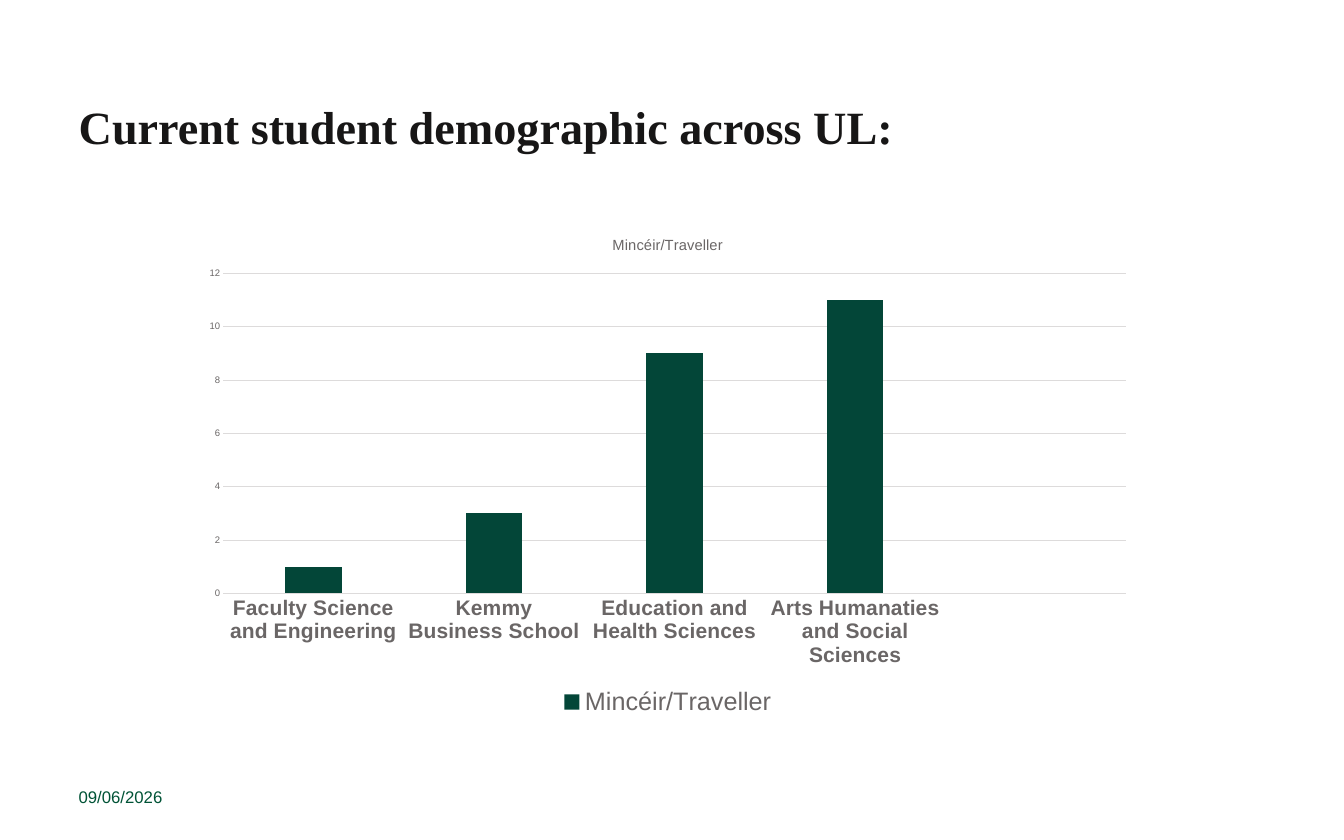
import pptx
import pptx.chart.data
import pptx.dml.color
import pptx.enum.chart
import pptx.enum.text
import pptx.util
from dataclasses import dataclass


@dataclass(frozen=True)
class Theme:
    heading_face: str = "Times New Roman"
    body_face: str = "Arial"
    ink: str = "171616"
    muted: str = "6A6666"
    rule: str = "DDDBDB"
    date_green: str = "005336"
    bar_green: str = "034638"
    heading_size: int = 44
    legend_size: int = 24
    category_size: int = 20
    date_size: int = 16
    chart_title_size: int = 14
    chart_size: int = 10
    value_size: int = 9
    rule_width: float = 0.75


theme = Theme()
SLIDE_WIDTH, SLIDE_HEIGHT = 17.78, 11.11


def style_font(font, face, size, color, bold=False):
    font.name = face
    font.size = pptx.util.Pt(size)
    font.bold = bold
    font.color.rgb = pptx.dml.color.RGBColor.from_string(color)


def share_box(left, top, width, height):
    """Turn percentages of the slide into left, top, width and height."""
    across, down = SLIDE_WIDTH / 100, SLIDE_HEIGHT / 100
    return [pptx.util.Inches(length) for length in
            (left * across, top * down, width * across, height * down)]


presentation = pptx.Presentation()
presentation.slide_width = pptx.util.Inches(SLIDE_WIDTH)
presentation.slide_height = pptx.util.Inches(SLIDE_HEIGHT)
slide = presentation.slides.add_slide(presentation.slide_layouts[5])

# Heading
heading = slide.shapes.title
heading.left, heading.top, heading.width, heading.height = share_box(5.29, 12.06, 86.22, 10.26)
heading.text_frame.text = "Current student demographic across UL:"
heading.text_frame.vertical_anchor = pptx.enum.text.MSO_ANCHOR.TOP
heading_line = heading.text_frame.paragraphs[0]
heading_line.alignment = pptx.enum.text.PP_ALIGN.LEFT
heading_line.line_spacing = 0.9
style_font(heading_line.runs[0].font, theme.heading_face, theme.heading_size, theme.ink, bold=True)

# Student numbers by faculty; the last column is left open
students = {
    "Faculty Science and Engineering": 1,
    "Kemmy Business School": 3,
    "Education and Health Sciences": 9,
    "Arts Humanaties and Social Sciences": 11,
    "": None,
}
group = "Mincéir/Traveller"
demographic = pptx.chart.data.CategoryChartData()
demographic.categories = list(students)
demographic.add_series(group, list(students.values()))
chart = slide.shapes.add_chart(
    pptx.enum.chart.XL_CHART_TYPE.COLUMN_CLUSTERED,
    *share_box(14.17, 26.01, 71.03, 59.86), demographic).chart
style_font(chart.font, theme.body_face, theme.chart_size, theme.ink)

chart.has_title = True
chart.chart_title.include_in_layout = False
chart.chart_title.text_frame.text = group
style_font(chart.chart_title.text_frame.paragraphs[0].runs[0].font,
           theme.body_face, theme.chart_title_size, theme.muted)

chart.has_legend = True
chart.legend.position = pptx.enum.chart.XL_LEGEND_POSITION.BOTTOM
chart.legend.include_in_layout = False
style_font(chart.legend.font, theme.body_face, theme.legend_size, theme.muted)

columns = chart.plots[0]
columns.vary_by_categories = False
columns.gap_width = 219
columns.overlap = -27
bars = columns.series[0].format.fill
bars.solid()
bars.fore_color.rgb = pptx.dml.color.RGBColor.from_string(theme.bar_green)

# Axes
faculties, counts = chart.category_axis, chart.value_axis
for axis in (faculties, counts):
    axis.major_tick_mark = pptx.enum.chart.XL_TICK_MARK.NONE
    axis.minor_tick_mark = pptx.enum.chart.XL_TICK_MARK.NONE
style_font(faculties.tick_labels.font, theme.body_face, theme.category_size, theme.muted, bold=True)
style_font(counts.tick_labels.font, theme.body_face, theme.value_size, theme.muted)
counts.minimum_scale, counts.maximum_scale, counts.major_unit = 0, 12, 2
counts.has_major_gridlines = True
counts.format.line.fill.background()
for rule in (faculties.format.line, counts.major_gridlines.format.line):
    rule.color.rgb = pptx.dml.color.RGBColor.from_string(theme.rule)
    rule.width = pptx.util.Pt(theme.rule_width)

# Date
date = slide.shapes.add_textbox(*share_box(5.29, 92.17, 22.5, 5.31)).text_frame
date.word_wrap = True
date.vertical_anchor = pptx.enum.text.MSO_ANCHOR.MIDDLE
date.text = "09/06/2026"
style_font(date.paragraphs[0].runs[0].font, theme.body_face, theme.date_size, theme.date_green)

presentation.save("out.pptx")
